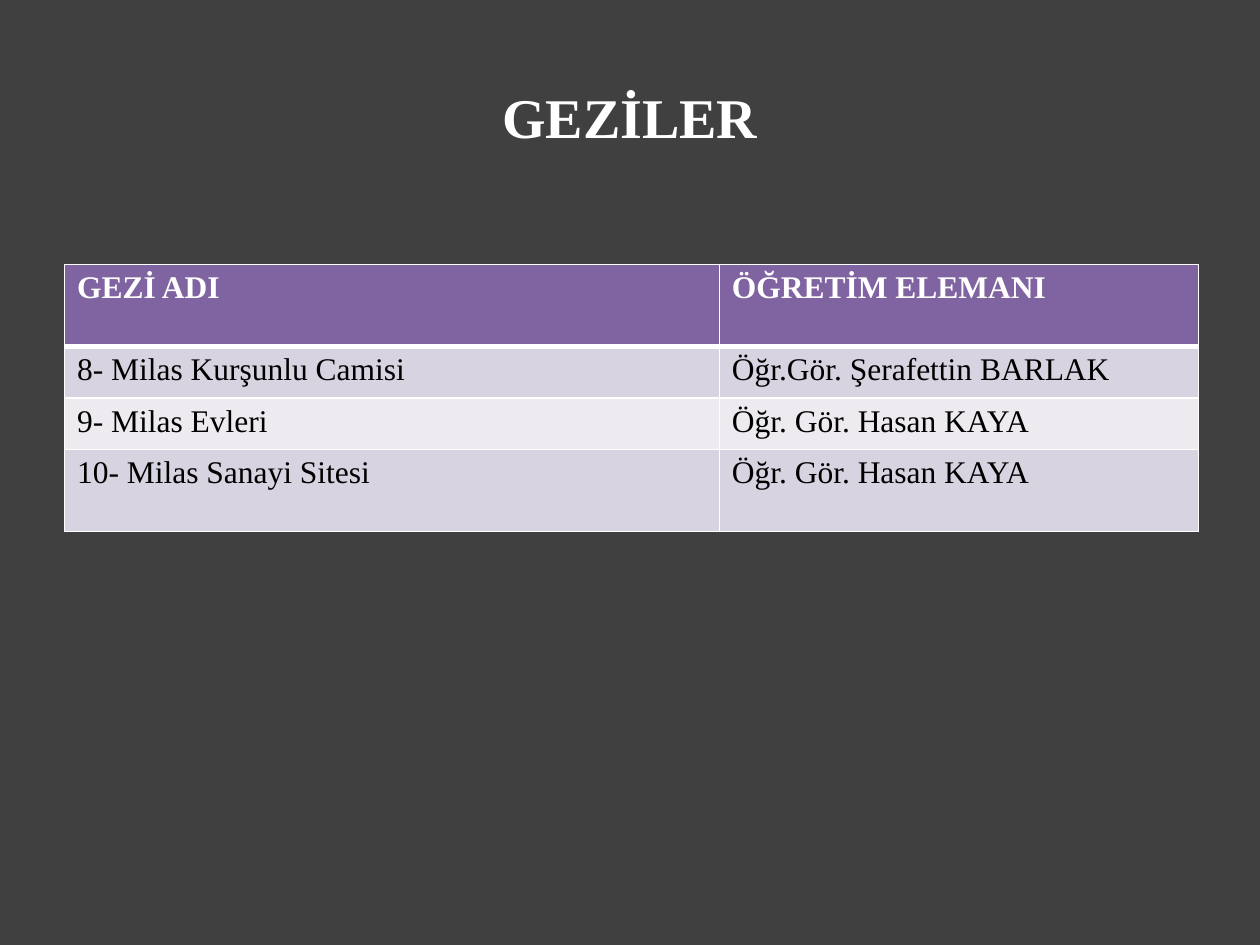
"""Build the GEZİLER slide with its table of trips and instructors."""
from pptx import Presentation
from pptx.dml.color import RGBColor
from pptx.enum.text import MSO_ANCHOR, PP_ALIGN
from pptx.oxml import parse_xml
from pptx.oxml.ns import nsdecls
from pptx.util import Cm, Pt

FONT = "Times New Roman"
WHITE = RGBColor(0xFF, 0xFF, 0xFF)
BLACK = RGBColor(0x00, 0x00, 0x00)
CHARCOAL = RGBColor(0x40, 0x40, 0x40)
PURPLE = RGBColor(0x80, 0x64, 0xA2)
BAND_DARK = RGBColor(0xD8, 0xD3, 0xE0)
BAND_LIGHT = RGBColor(0xED, 0xEA, 0xF0)

TRIPS = [
    ("GEZİ ADI", "ÖĞRETİM ELEMANI"),
    ("8- Milas Kurşunlu Camisi", "Öğr.Gör. Şerafettin BARLAK"),
    ("9- Milas Evleri", "Öğr. Gör. Hasan KAYA"),
    ("10- Milas Sanayi Sitesi", "Öğr. Gör. Hasan KAYA"),
]
COLUMN_WIDTHS = [13.2, 9.66]
ROW_HEIGHTS = [1.65, 1.04, 1.04, 1.65]


def format_text(paragraph, size, color, bold):
    for run in paragraph.runs:
        run.font.name = FONT
        run.font.size = Pt(size)
        run.font.bold = bold
        run.font.color.rgb = color


def add_border(cell, side, width):
    cell._tc.get_or_add_tcPr().append(parse_xml(
        f'<a:ln{side} {nsdecls("a")} w="{Pt(width)}"><a:solidFill>'
        f'<a:srgbClr val="{WHITE}"/></a:solidFill></a:ln{side}>'))


presentation = Presentation()
presentation.slide_width = Cm(25.4)
presentation.slide_height = Cm(19.05)
slide = presentation.slides.add_slide(presentation.slide_layouts[6])
slide.background.fill.solid()
slide.background.fill.fore_color.rgb = CHARCOAL

title = slide.shapes.add_textbox(Cm(1.27), Cm(0.76), Cm(22.86), Cm(3.18))
title.text_frame.word_wrap = True
title.text_frame.vertical_anchor = MSO_ANCHOR.MIDDLE
title.text_frame.text = "GEZİLER"
title_paragraph = title.text_frame.paragraphs[0]
title_paragraph.alignment = PP_ALIGN.CENTER
format_text(title_paragraph, 32, WHITE, True)

table = slide.shapes.add_table(
    len(TRIPS), len(COLUMN_WIDTHS), Cm(1.3), Cm(5.33),
    Cm(sum(COLUMN_WIDTHS)), Cm(sum(ROW_HEIGHTS))).table
for column, width in zip(table.columns, COLUMN_WIDTHS):
    column.width = Cm(width)

for row_index, trip in enumerate(TRIPS):
    table.rows[row_index].height = Cm(ROW_HEIGHTS[row_index])
    is_header = row_index == 0
    band = BAND_DARK if row_index % 2 else BAND_LIGHT
    for column_index, text in enumerate(trip):
        cell = table.cell(row_index, column_index)
        cell.text_frame.text = text
        format_text(cell.text_frame.paragraphs[0], 18,
                    WHITE if is_header else BLACK, is_header)
        add_border(cell, "L", 1)
        add_border(cell, "R", 1)
        add_border(cell, "T", 3 if row_index == 1 else 1)
        add_border(cell, "B", 3 if is_header else 1)
        cell.fill.solid()
        cell.fill.fore_color.rgb = PURPLE if is_header else band

presentation.save("out.pptx")
